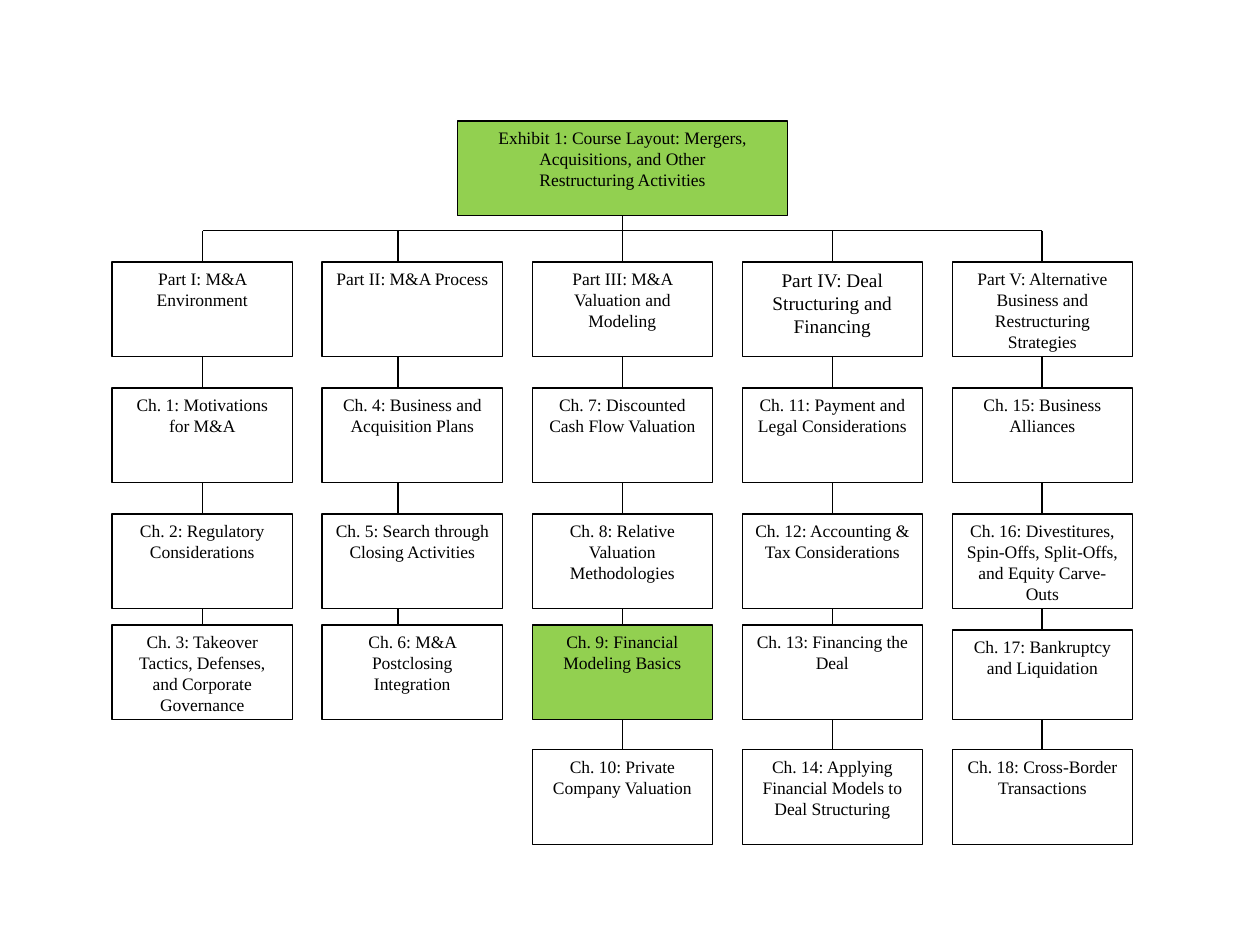
from lxml import etree
from pptx import Presentation
from pptx.dml.color import RGBColor
from pptx.enum.shapes import MSO_CONNECTOR, MSO_SHAPE
from pptx.enum.text import MSO_ANCHOR, PP_ALIGN
from pptx.oxml.ns import qn
from pptx.util import Inches, Pt

BLACK = RGBColor(0x00, 0x00, 0x00)
WHITE = RGBColor(0xFF, 0xFF, 0xFF)
GREEN = RGBColor(0x92, 0xD0, 0x50)
FONT = "Times New Roman"

TITLE = [
    "Exhibit 1: Course Layout: Mergers, Acquisitions, and Other",
    "Restructuring Activities",
]
# Each column is a course part followed by its chapters.
PARTS = [
    ["Part I: M&A Environment",
     "Ch. 1: Motivations for M&A",
     "Ch. 2: Regulatory Considerations",
     "Ch. 3: Takeover Tactics, Defenses, and Corporate Governance"],
    ["Part II: M&A Process",
     "Ch. 4: Business and Acquisition Plans",
     "Ch. 5: Search through Closing Activities",
     "Ch. 6: M&A Postclosing Integration"],
    ["Part III: M&A Valuation and Modeling",
     "Ch. 7: Discounted Cash Flow Valuation",
     "Ch. 8: Relative Valuation Methodologies",
     "Ch. 9: Financial Modeling Basics",
     "Ch. 10: Private Company Valuation"],
    ["Part IV: Deal Structuring and Financing",
     "Ch. 11: Payment and Legal Considerations",
     "Ch. 12: Accounting & Tax Considerations",
     "Ch. 13: Financing the Deal",
     "Ch. 14: Applying Financial Models to Deal Structuring"],
    ["Part V: Alternative Business and Restructuring Strategies",
     "Ch. 15: Business Alliances",
     "Ch. 16: Divestitures, Spin-Offs, Split-Offs, and Equity Carve-Outs",
     "Ch. 17: Bankruptcy and Liquidation",
     "Ch. 18: Cross-Border Transactions"],
]
HIGHLIGHTED = {"Ch. 9: Financial Modeling Basics"}
FONT_SIZES = {"Part IV: Deal Structuring and Financing": 11}
LOWERED = {"Ch. 17: Bankruptcy and Liquidation": 0.04}

TITLE_LEFT, TITLE_TOP, TITLE_WIDTH = 3.63, 0.96, 2.62
COLUMN_LEFT, COLUMN_STEP = 0.89, 1.667
BOX_WIDTH, BOX_HEIGHT = 1.43, 0.75
ROW_TOPS = [2.08, 3.08, 4.08, 4.96, 5.95]
BUS_TOP = 1.83
CONNECTOR_X = [1.61, 3.16, 4.94, 6.61, 8.27]


def add_box(slide, paragraphs, left, top, width, height, fill=WHITE, size=10):
    shape = slide.shapes.add_shape(
        MSO_SHAPE.RECTANGLE, Inches(left), Inches(top), Inches(width), Inches(height))
    shape.shadow.inherit = False
    shape.fill.solid()
    shape.fill.fore_color.rgb = fill
    shape.line.color.rgb = BLACK
    shape.line.width = Pt(0.75)
    frame = shape.text_frame
    frame.word_wrap = True
    frame.vertical_anchor = MSO_ANCHOR.TOP
    for index, text in enumerate(paragraphs):
        paragraph = frame.add_paragraph() if index else frame.paragraphs[0]
        paragraph.alignment = PP_ALIGN.CENTER
        run = paragraph.add_run()
        run.text = text
        run.font.name = FONT
        run.font.size = Pt(size)
        run.font.color.rgb = BLACK


def add_line(slide, x1, y1, x2, y2):
    connector = slide.shapes.add_connector(
        MSO_CONNECTOR.STRAIGHT, Inches(x1), Inches(y1), Inches(x2), Inches(y2))
    connector.line.color.rgb = BLACK
    connector.line.width = Pt(0.75)
    etree.SubElement(connector._element.spPr, qn("a:effectLst"))


def add_part(slide, column, labels):
    """Draw one column of boxes, each joined to what is above it."""
    left = COLUMN_LEFT + column * COLUMN_STEP
    x = CONNECTOR_X[column]
    bottom_above = BUS_TOP
    for label, row_top in zip(labels, ROW_TOPS):
        lowered = LOWERED.get(label, 0)
        top = row_top + lowered
        add_line(slide, x, bottom_above, x, top)
        add_box(slide, [label], left, top, BOX_WIDTH, BOX_HEIGHT - lowered,
                GREEN if label in HIGHLIGHTED else WHITE,
                FONT_SIZES.get(label, 10))
        bottom_above = row_top + BOX_HEIGHT


def main():
    presentation = Presentation()
    presentation.slide_width = Inches(10)
    presentation.slide_height = Inches(7.5)
    slide = presentation.slides.add_slide(presentation.slide_layouts[6])

    add_box(slide, TITLE, TITLE_LEFT, TITLE_TOP, TITLE_WIDTH, BOX_HEIGHT, GREEN)
    title_center = TITLE_LEFT + TITLE_WIDTH / 2
    add_line(slide, title_center, TITLE_TOP + BOX_HEIGHT, title_center, BUS_TOP)
    add_line(slide, CONNECTOR_X[0], BUS_TOP, CONNECTOR_X[-1], BUS_TOP)
    for column, labels in enumerate(PARTS):
        add_part(slide, column, labels)

    presentation.save("out.pptx")


if __name__ == "__main__":
    main()
